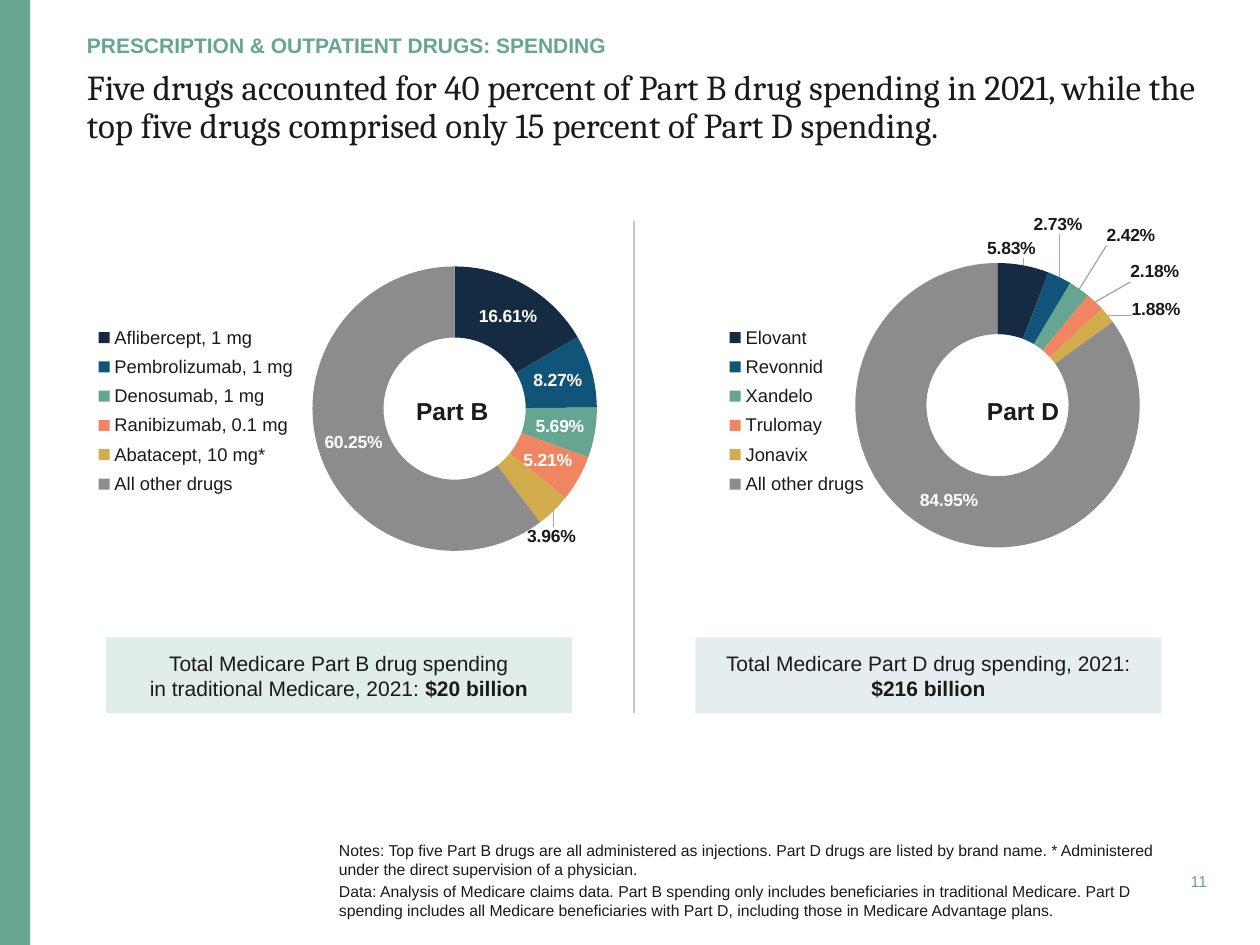
from dataclasses import dataclass
from math import cos, pi, sin
from lxml import etree
from pptx import Presentation
from pptx.chart.data import CategoryChartData
from pptx.dml.color import RGBColor
from pptx.enum.chart import XL_CHART_TYPE as ChartType, XL_LEGEND_POSITION as LegendPosition
from pptx.enum.shapes import MSO_CONNECTOR as Connector, MSO_SHAPE as Shape
from pptx.enum.text import MSO_ANCHOR as Anchor, PP_ALIGN as Align
from pptx.oxml import parse_xml
from pptx.oxml.ns import nsdecls, qn
from pptx.util import Inches, Pt


@dataclass(frozen=True)
class Theme:
    sans: str = "Arial"
    serif: str = "Cambria"
    ink: str = "1A1A1A"
    white: str = "FFFFFF"
    accent: str = "65A591"
    blue: str = "115479"
    mint: str = "E0EDE9"
    rule: str = "C6C6C6"
    leader: str = "A6A6A6"
    slices: tuple = ("142B41", "115479", "65A591", "F08661", "D3AC4C", "8C8C8C")
    title: float = 20
    ring_name: float = 14
    body: float = 12
    legend: float = 10.5
    label: float = 10
    note: float = 9


THEME = Theme()
CHART_WIDTH, CHART_HEIGHT = 4.12, 3.4
RING_WIDTH, RING_HEIGHT = 0.575, 0.664
LABEL_RADIUS = 0.85


def style_font(font, size, color=THEME.ink, bold=False, name=THEME.sans):
    font.name, font.size, font.bold = name, Pt(size), bold
    font.color.rgb = RGBColor.from_string(color)


def add_text(slide, box, lines, size, color=THEME.ink, bold=False, name=THEME.sans,
             align=Align.LEFT, anchor=Anchor.MIDDLE, wrap=True, spacing=None, gap=0):
    frame = slide.shapes.add_textbox(*map(Inches, box)).text_frame
    frame.word_wrap = wrap
    frame.vertical_anchor = anchor
    frame.margin_left = frame.margin_right = frame.margin_top = frame.margin_bottom = 0
    for index, line in enumerate(lines):
        paragraph = frame.paragraphs[0] if index == 0 else frame.add_paragraph()
        paragraph.text = line
        paragraph.alignment = align
        if spacing:
            paragraph.line_spacing = spacing
        if index:
            paragraph.space_before = Pt(gap)
        style_font(paragraph.font, size, color, bold, name)


def add_block(slide, box, color, alpha=None):
    shape = slide.shapes.add_shape(Shape.RECTANGLE, *map(Inches, box))
    shape.shadow.inherit = False
    shape.fill.solid()
    shape.fill.fore_color.rgb = RGBColor.from_string(color)
    shape.line.fill.background()
    if alpha is not None:
        color_element = shape._element.spPr.find(qn("a:solidFill"))[0]
        etree.SubElement(color_element, qn("a:alpha")).set("val", str(alpha * 1000))
    return shape


def manual_layout(target=None, **values):
    layout = parse_xml(f"<c:layout {nsdecls('c')}><c:manualLayout/></c:layout>")
    if target:
        values = {"layoutTarget": target, "xMode": "edge", "yMode": "edge", **values}
    for key, value in values.items():
        etree.SubElement(layout[0], qn(f"c:{key}")).set("val", str(value))
    return layout


def replace_layout(parent, layout, index):
    for old in parent.findall(qn("c:layout")):
        parent.remove(old)
    parent.insert(index, layout)


def add_ring(slide, left, top, names, shares, ring_left, ring_top, outside):
    data = CategoryChartData(number_format="0.00%")
    data.categories = names
    data.add_series("Series 1", shares)
    chart = slide.shapes.add_chart(
        ChartType.DOUGHNUT, Inches(left), Inches(top),
        Inches(CHART_WIDTH), Inches(CHART_HEIGHT), data).chart
    chart.has_title = False
    style_font(chart.font, THEME.label)
    chart.has_legend = True
    legend = chart.legend
    legend.position = LegendPosition.LEFT
    legend.include_in_layout = False
    style_font(legend.font, THEME.legend)
    legend_layout = manual_layout(xMode="edge", yMode="edge", x=0.01, y=0.3, w=0.4, h=0.43)
    replace_layout(legend._element, legend_layout, 1)

    plot = chart.plots[0]
    plot.vary_by_categories = True
    plot._element.find(qn("c:holeSize")).set("val", "60")
    plot_layout = manual_layout("inner", x=ring_left, y=ring_top, w=RING_WIDTH, h=RING_HEIGHT)
    replace_layout(plot._element.getparent(), plot_layout, 0)

    series = plot.series[0]
    labels = series.data_labels
    labels.show_value = True
    labels.number_format = "0.00%"
    labels.number_format_is_linked = False
    style_font(labels.font, THEME.label, THEME.white, True)
    labels._element.append(parse_xml(
        f"<c:leaderLines {nsdecls('c', 'a')}><c:spPr><a:ln w='9525'><a:solidFill>"
        f"<a:srgbClr val='{THEME.leader}'/></a:solidFill></a:ln></c:spPr></c:leaderLines>"))
    for index, color in enumerate(THEME.slices):
        point = series.points[index]
        point.format.fill.solid()
        point.format.fill.fore_color.rgb = RGBColor.from_string(color)
        point.format.line.fill.background()
        if index in outside:
            angle = 2 * pi * (sum(shares[:index]) + shares[index] / 2)
            across, down = outside[index]
            offset_x = (across - LABEL_RADIUS * sin(angle)) / CHART_WIDTH
            offset_y = (down + LABEL_RADIUS * cos(angle)) / CHART_HEIGHT
            label = point.data_label
            style_font(label.font, THEME.label, THEME.ink, True)
            label_layout = manual_layout(x=round(offset_x, 4), y=round(offset_y, 4))
            replace_layout(label._dLbl, label_layout, 1)


def add_total(slide, box, lines, amount, color, alpha=None):
    frame = add_block(slide, box, color, alpha).text_frame
    frame.word_wrap = True
    frame.vertical_anchor = Anchor.MIDDLE
    paragraph = frame.paragraphs[0]
    paragraph.alignment = Align.CENTER
    paragraph.space_after = Pt(6)
    style_font(paragraph.font, THEME.body)
    for index, line in enumerate(lines):
        if index:
            paragraph.add_line_break()
        if line:
            paragraph.add_run().text = line
    run = paragraph.add_run()
    run.text = amount
    run.font.bold = True


def add_header(slide, left, top):
    add_text(slide, (left, top, 8.66, 0.27), ["PRESCRIPTION & OUTPATIENT DRUGS: SPENDING"],
             THEME.body, THEME.accent, True, anchor=Anchor.BOTTOM)
    add_text(slide, (left, top + 0.37, 8.95, 0.8),
             ["Five drugs accounted for 40 percent of Part B drug spending in 2021, while the "
              "top five drugs comprised only 15 percent of Part D spending."],
             THEME.title, name=THEME.serif, anchor=Anchor.TOP, spacing=0.9)


def add_divider(slide, x, top, bottom):
    line = slide.shapes.add_connector(
        Connector.STRAIGHT, Inches(x), Inches(top), Inches(x), Inches(bottom))
    line.line.color.rgb = RGBColor.from_string(THEME.rule)
    line.line.width = Pt(1)
    etree.SubElement(line._element.spPr, qn("a:effectLst"))


def add_footer(slide, left, top):
    add_text(slide, (left, top, 6.59, 0.85), [
        "Notes: Top five Part B drugs are all administered as injections. Part D drugs are "
        "listed by brand name. * Administered under the direct supervision of a physician.",
        "Data: Analysis of Medicare claims data. Part B spending only includes beneficiaries in "
        "traditional Medicare. Part D spending includes all Medicare beneficiaries with Part D, "
        "including those in Medicare Advantage plans."], THEME.note, gap=1.8)
    add_text(slide, (left + 6.58, top + 0.32, 0.31, 0.22), ["11"], THEME.note, THEME.accent,
             align=Align.RIGHT, wrap=False)


def main():
    presentation = Presentation()
    presentation.slide_width, presentation.slide_height = Inches(10), Inches(7.5)
    slide = presentation.slides.add_slide(presentation.slide_layouts[6])
    add_block(slide, (0, 0, 0.24, 7.5), THEME.accent)
    add_footer(slide, 2.69, 6.56)
    add_header(slide, 0.69, 0.19)
    add_ring(slide, 0.69, 1.51,
             ["Aflibercept, 1 mg", "Pembrolizumab, 1 mg", "Denosumab, 1 mg",
              "Ranibizumab, 0.1 mg", "Abatacept, 10 mg*", "All other drugs"],
             [0.1661, 0.0827, 0.0569, 0.0521, 0.0396, 0.6025], 0.421, 0.178, {4: (0.77, 1.02)})
    add_ring(slide, 5.46, 1.51,
             ["Elovant", "Revonnid", "Xandelo", "Trulomay", "Jonavix", "All other drugs"],
             [0.0583, 0.0273, 0.0242, 0.0218, 0.0188, 0.8495], 0.309, 0.17,
             {0: (0.11, -1.25), 1: (0.48, -1.44), 2: (1.06, -1.35),
              3: (1.25, -1.06), 4: (1.26, -0.76)})
    add_divider(slide, 5.03, 1.75, 5.66)
    for name, left, width in (("Part B", 2.91, 1.36), ("Part D", 7.32, 1.6)):
        add_text(slide, (left, 3.09, width, 0.34), [name], THEME.ring_name, bold=True,
                 align=Align.CENTER)
    add_total(slide, (0.84, 5.06, 3.7, 0.6),
              ["Total Medicare Part B drug spending", "in traditional Medicare, 2021: "],
              "$20 billion", THEME.mint)
    add_total(slide, (5.52, 5.06, 3.7, 0.6),
              ["Total Medicare Part D drug spending, 2021:", ""], "$216 billion", THEME.blue, 10)
    presentation.save("out.pptx")


if __name__ == "__main__":
    main()
